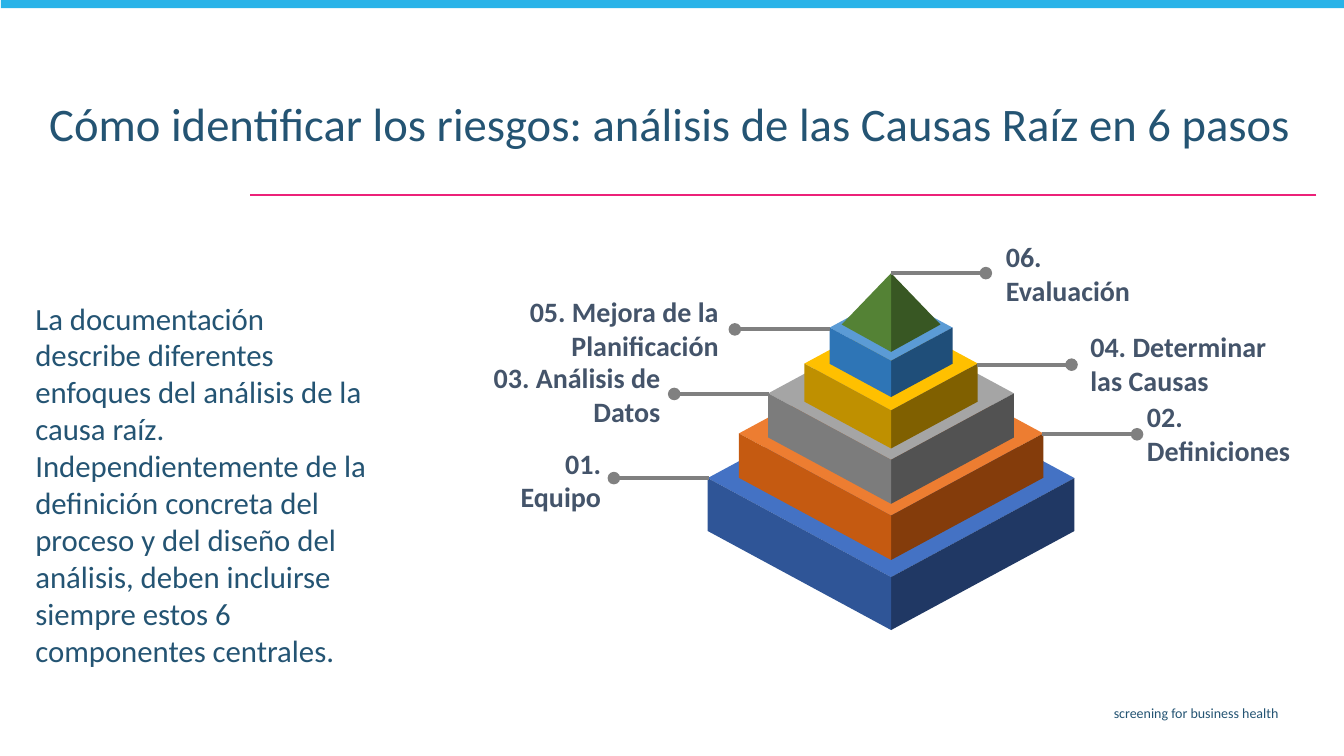
from lxml.etree import SubElement
from pptx import Presentation
from pptx.dml.color import RGBColor
from pptx.enum.shapes import MSO_CONNECTOR, MSO_SHAPE
from pptx.enum.text import MSO_ANCHOR, PP_ALIGN
from pptx.oxml.ns import qn
from pptx.util import Pt

COLORS = {
    "text": "245473", "label": "44546A", "bar": "29B3E8",
    "rule": "EC2179", "leader": "808080",
    "tip_left": "548235", "tip_right": "385723",
}
FONT = "Calibri"
AXIS = 636.5    # x of the pyramid's vertical edge
SLOPE = 0.54    # half height of a tier's top per half width
LEADER = 67.7   # length of a leader line

# Half width, middle y of the top, depth, colours of top, left and right
TIERS = [
    (131, 341.5, 37.8, "4472C4", "2F5597", "203864"),
    (108.7, 309.6, 31.7, "ED7D31", "C55A11", "843C0B"),
    (87.8, 281, 31.5, "A5A5A5", "7C7C7C", "525252"),
    (61.9, 259.7, 27.2, "FFC000", "BF9000", "806000"),
    (43.9, 234, 25.9, "5B9BD5", "2E75B6", "1F4E79"),
]
# Paragraphs, side (-1 left, 1 right), leader offset from axis and y, text box
STEPS = [
    (["01. Equipo"], -1, 130.3, 341.5, (337, 326.9, 99.4, 31.5)),
    (["02. Definiciones"], 1, 108, 310.2, (812.2, 293.8, 141.8, 31.5)),
    (["03. Análisis de Datos"], -1, 87.2, 281.4, (300.2, 265.7, 178.6, 31.5)),
    (["04. Determinar", "las Causas"], 1, 61.2, 260.5, (771.8, 231.8, 160, 55.4)),
    (["05. Mejora de la Planificación"], -1, 43.9, 235.3, (271.4, 218.9, 249.1, 31.5)),
    (["06. Evaluación"], 1, 0, 195.1, (711.4, 179.3, 128.9, 31.5)),
]


def rgb(color):
    return RGBColor.from_string(color)


def paint(sp, color):
    sp.fill.solid()
    sp.fill.fore_color.rgb = rgb(color)
    sp.line.fill.background()
    sp.shadow.inherit = False


def add_text(s, box, paragraphs, size, color=COLORS["text"], bold=False,
             align=PP_ALIGN.LEFT, anchor=MSO_ANCHOR.TOP, spacing=None):
    tf = s.shapes.add_textbox(*map(Pt, box)).text_frame
    tf.word_wrap = True
    tf.vertical_anchor = anchor
    for i, text in enumerate(paragraphs):
        p = tf.add_paragraph() if i else tf.paragraphs[0]
        p.alignment = align
        p.line_spacing = spacing
        r = p.add_run()
        r.text = text
        r.font.name = FONT
        r.font.size = Pt(size)
        r.font.bold = bold
        r.font.color.rgb = rgb(color)


def add_line(s, x1, y1, x2, y2, color, width, dot=False):
    line = s.shapes.add_connector(
        MSO_CONNECTOR.STRAIGHT, Pt(x1), Pt(y1), Pt(x2), Pt(y2))
    line.line.color.rgb = rgb(color)
    line.line.width = Pt(width)
    if dot:
        SubElement(line.line._get_or_add_ln(), qn("a:tailEnd"), type="oval")
    SubElement(line._element.spPr, qn("a:effectLst"))


def add_face(s, points, color):
    """Draw a polygon from (offset from axis, y) points."""
    corners = [(Pt(AXIS + dx), Pt(y)) for dx, y in points]
    builder = s.shapes.build_freeform(*corners[0], scale=1.0)
    builder.add_line_segments(corners[1:], close=True)
    paint(builder.convert_to_shape(), color)


def add_tier(s, half, mid, depth, top, left, right):
    rise = half * SLOPE
    front = mid + rise
    add_face(s, [(0, mid - rise), (half, mid), (0, front), (-half, mid)], top)
    for side, color in ((1, right), (-1, left)):
        x = side * half
        add_face(s, [(0, front + depth), (x, mid + depth), (x, mid), (0, front)], color)


def add_tip(s):
    for side, color in ((1, COLORS["tip_right"]), (-1, COLORS["tip_left"])):
        add_face(s, [(0, 195.1), (side * 35.3, 231.8), (0, 251.3)], color)


def add_step(s, paragraphs, side, offset, y, box):
    x = AXIS + side * offset
    add_line(s, x, y, x + side * LEADER, y, COLORS["leader"], 3, dot=True)
    align = PP_ALIGN.LEFT if side > 0 else PP_ALIGN.RIGHT
    add_text(s, box, paragraphs, 20, COLORS["label"], True, align, MSO_ANCHOR.MIDDLE)


def main():
    prs = Presentation()
    prs.slide_width, prs.slide_height = Pt(960), Pt(540)
    s = prs.slides.add_slide(prs.slide_layouts[6])

    # Frame: rule, top bar and footer
    add_line(s, 940.3, 139, 178.6, 139, COLORS["rule"], 1.5)
    bar = s.shapes.add_shape(
        MSO_SHAPE.RECTANGLE, Pt(0.7), Pt(-1.4), Pt(959.3), Pt(7.2))
    paint(bar, COLORS["bar"])
    add_text(s, (262.8, 499.7, 657.4, 20.9), ["screening for business health"],
             10, align=PP_ALIGN.RIGHT)

    # Title and explanation
    add_text(s, (28.1, 69.1, 907.2, 73.4),
             ["Cómo identificar los riesgos: análisis de las Causas Raíz en 6 pasos"],
             33.3, spacing=0.9)
    add_text(s, (18.2, 210.2, 252, 272.9),
             ["La documentación describe diferentes enfoques del análisis de la "
              "causa raíz. Independientemente de la definición concreta del "
              "proceso y del diseño del análisis, deben incluirse siempre estos "
              "6 componentes centrales."], 22)

    # Pyramid, from the base up
    for tier in TIERS:
        add_tier(s, *tier)
    add_tip(s)

    # Steps with their leader lines
    for step in STEPS:
        add_step(s, *step)

    prs.save("out.pptx")


if __name__ == "__main__":
    main()
